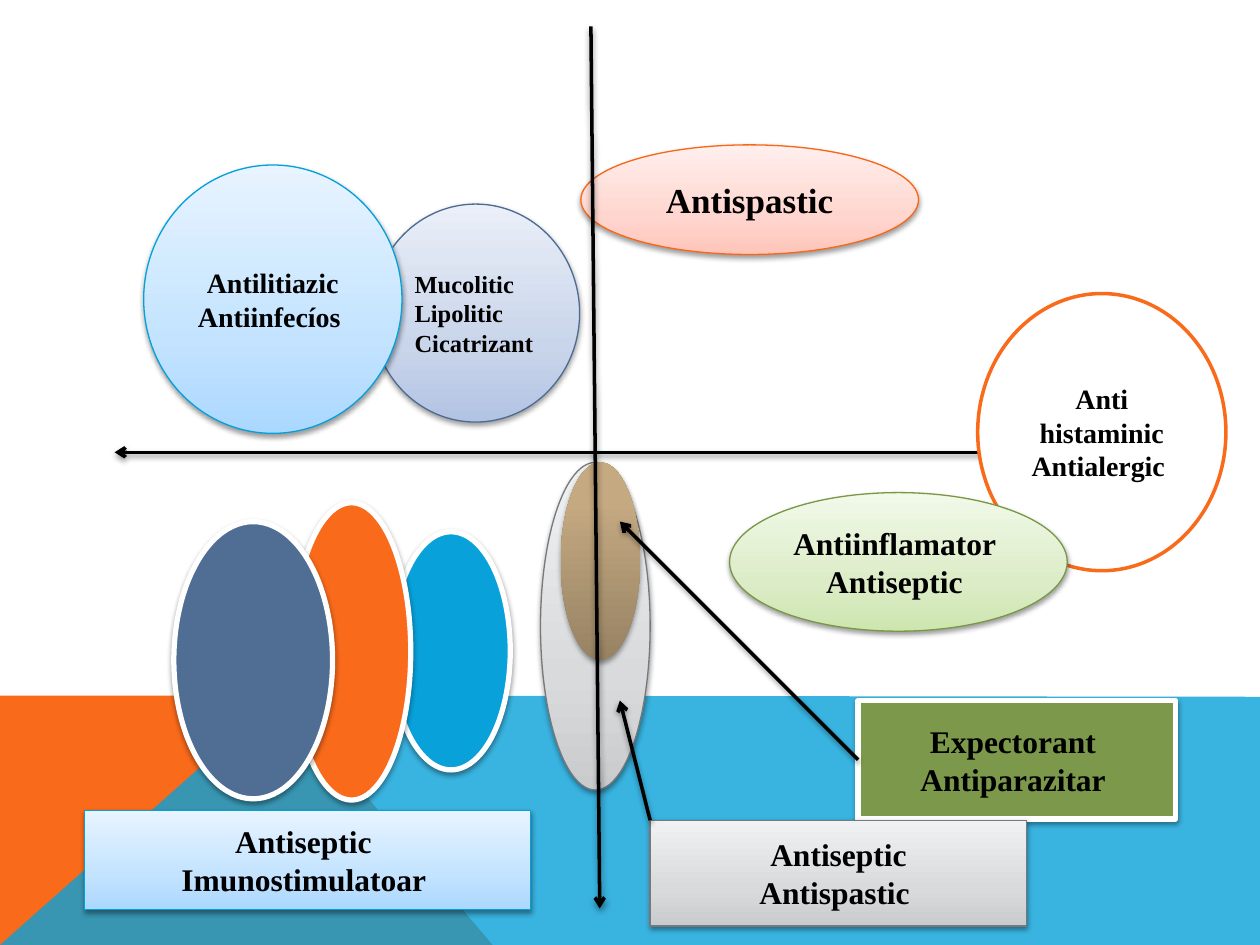
from copy import deepcopy

from lxml import etree
from pptx import Presentation
from pptx.dml.color import RGBColor
from pptx.enum import shapes, text
from pptx.oxml.ns import qn
from pptx.util import Inches, Pt

OVAL, RECT = shapes.MSO_SHAPE.OVAL, shapes.MSO_SHAPE.RECTANGLE
CENTER, JUSTIFY = text.PP_ALIGN.CENTER, text.PP_ALIGN.JUSTIFY
BLUE, ORANGE, SLATE, GREEN = "08A1D9", "F96A1B", "506E94", "7C984A"
WHITE, BLACK = "FFFFFF", "000000"

# Gradient stops run from the bottom of a shape to its top
PALE_RED = [(0, "FFC5BA"), (0.35, "FFD6CF"), (1, "FFEFED")]
PALE_SLATE = [(0, "B2C3E3"), (0.35, "C9D5EA"), (1, "EAEFF8")]
PALE_BLUE = [(0, "ABD8FF"), (0.35, "C3E3FF"), (1, "E8F4FF")]
PALE_GREY = [(0, "C9CBCD"), (0.35, "D9DADC"), (1, "F0F1F2")]
PALE_GREEN = [(0, "CDE6AF"), (0.35, "DCECC7"), (1, "F1F9E9")]
BROWN = [(0, "978263"), (0.8, "C4A981"), (1, "C6AA80")]

color = RGBColor.from_string


def add_shadow(shape):
    effects = etree.SubElement(shape._element.spPr, qn("a:effectLst"))
    shadow = etree.SubElement(
        effects, qn("a:outerShdw"), blurRad=str(Pt(3.1)), dist=str(Pt(1.6)),
        dir="5400000", rotWithShape="0")
    black = etree.SubElement(shadow, qn("a:srgbClr"), val=BLACK)
    etree.SubElement(black, qn("a:alpha"), val="38000")


def paint(shape, fill):
    """Fill with one hex colour or with a list of (position, hex) stops."""
    if isinstance(fill, str):
        shape.fill.solid()
        shape.fill.fore_color.rgb = color(fill)
        return
    shape.fill.gradient()
    shape.fill.gradient_angle = 90
    first_stop = shape._element.spPr.find(".//" + qn("a:gs"))
    first_stop.addnext(deepcopy(first_stop))
    for stop, (position, hex_color) in zip(shape.fill.gradient_stops, fill):
        stop.position = position
        stop.color.rgb = color(hex_color)


prs = Presentation()
prs.slide_width, prs.slide_height = Inches(10), Inches(7.5)
slide = prs.slides.add_slide(prs.slide_layouts[6])

# Coloured bands along the bottom
bands = [
    (ORANGE, [(0, 7.5), (0, 5.52), (2.23, 5.52), (3.91, 7.5)]),
    (BLUE, [(0, 7.5), (2.23, 5.52), (10, 5.53), (10, 7.5)]),
]
for fill, corners in bands:
    points = [(Inches(x), Inches(y)) for x, y in corners]
    outline = slide.shapes.build_freeform(*points[0])
    outline.add_line_segments(points[1:], close=True)
    band = outline.convert_to_shape()
    paint(band, fill)
    band.line.fill.background()
    band.shadow.inherit = False
blue_fill = band._element.spPr.find(".//" + qn("a:srgbClr"))
etree.SubElement(blue_fill, qn("a:alpha"), val="80000")

# Back to front. An arrow is (from, to); a figure is
# (preset, box, fill, line colour, line width, text size, lines of text)
diagram = [
    ((8.46, 3.59), (0.91, 3.59)),
    (OVAL, (4.61, 1.15, 2.68, 0.87), PALE_RED, "F96615", 0.75, 20, ["Antispastic"]),
    (OVAL, (2.95, 1.62, 1.65, 1.73), PALE_SLATE, "4D6B92", 0.75, 14,
     ["Mucolitic", "Lipolitic", "Cicatrizant"]),
    (OVAL, (1.14, 1.31, 2.05, 2.13), PALE_BLUE, "03A0D9", 0.75, 16,
     ["Antilitiazic", "Antiinfecíos "]),
    (OVAL, (3.11, 4.22, 0.94, 1.89), BLUE, WHITE, 3, 18, []),
    (OVAL, (2.32, 3.99, 0.94, 2.36), ORANGE, WHITE, 3, 18, []),
    (OVAL, (1.38, 4.14, 1.26, 2.2), SLATE, WHITE, 3, 18, []),
    (OVAL, (4.29, 3.67, 0.87, 2.6), PALE_GREY, "76787B", 0.75, 18, []),
    (OVAL, (4.45, 3.67, 0.63, 1.57), BROWN, None, 0, 18, []),
    ((4.69, 0.21), (4.76, 7.21)),
    (OVAL, (7.76, 2.33, 1.97, 2.2), WHITE, ORANGE, 2, 16,
     ["Anti", "histaminic", "Antialergic "]),
    (RECT, (6.81, 5.56, 2.52, 0.94), GREEN, WHITE, 3, 18,
     ["Expectorant ", "Antiparazitar "]),
    ((6.81, 6.03), (4.92, 4.14)),
    (RECT, (5.16, 6.51, 2.99, 0.84), PALE_GREY, "76787B", 0.75, 18,
     ["Antiseptic", "Antispastic "]),
    ((5.16, 6.51), (4.92, 5.56)),
    (RECT, (0.67, 6.43, 3.54, 0.79), PALE_BLUE, "03A0D9", 0.75, 18,
     ["Antiseptic ", "Imunostimulatoar "]),
    (OVAL, (5.79, 3.91, 2.68, 1.1), PALE_GREEN, "7A9746", 0.75, 18,
     ["Antiinflamator ", "Antiseptic "]),
]
for item in diagram:
    if len(item) == 2:
        start, end = item
        arrow = slide.shapes.add_connector(
            shapes.MSO_CONNECTOR.STRAIGHT, *map(Inches, start + end))
        arrow.line.color.rgb = color(BLACK)
        arrow.line.width = Pt(2)
        etree.SubElement(arrow.line._get_or_add_ln(), qn("a:tailEnd"), type="arrow")
        add_shadow(arrow)
        continue

    preset, box, fill, line_color, line_width, size, words = item
    figure = slide.shapes.add_shape(preset, *map(Inches, box))
    paint(figure, fill)
    if line_color:
        figure.line.color.rgb = color(line_color)
        figure.line.width = Pt(line_width)
    else:
        figure.line.fill.background()
    if fill == WHITE:
        figure.shadow.inherit = False
    else:
        add_shadow(figure)

    if words:
        frame = figure.text_frame
        frame.text = "\n".join(words)
        frame.vertical_anchor = text.MSO_ANCHOR.MIDDLE
        for paragraph in frame.paragraphs:
            paragraph.alignment = JUSTIFY if fill == PALE_SLATE else CENTER
            paragraph.font.name = "Times New Roman"
            paragraph.font.size = Pt(size)
            paragraph.font.bold = True
            paragraph.font.color.rgb = color(BLACK)

prs.save("out.pptx")
